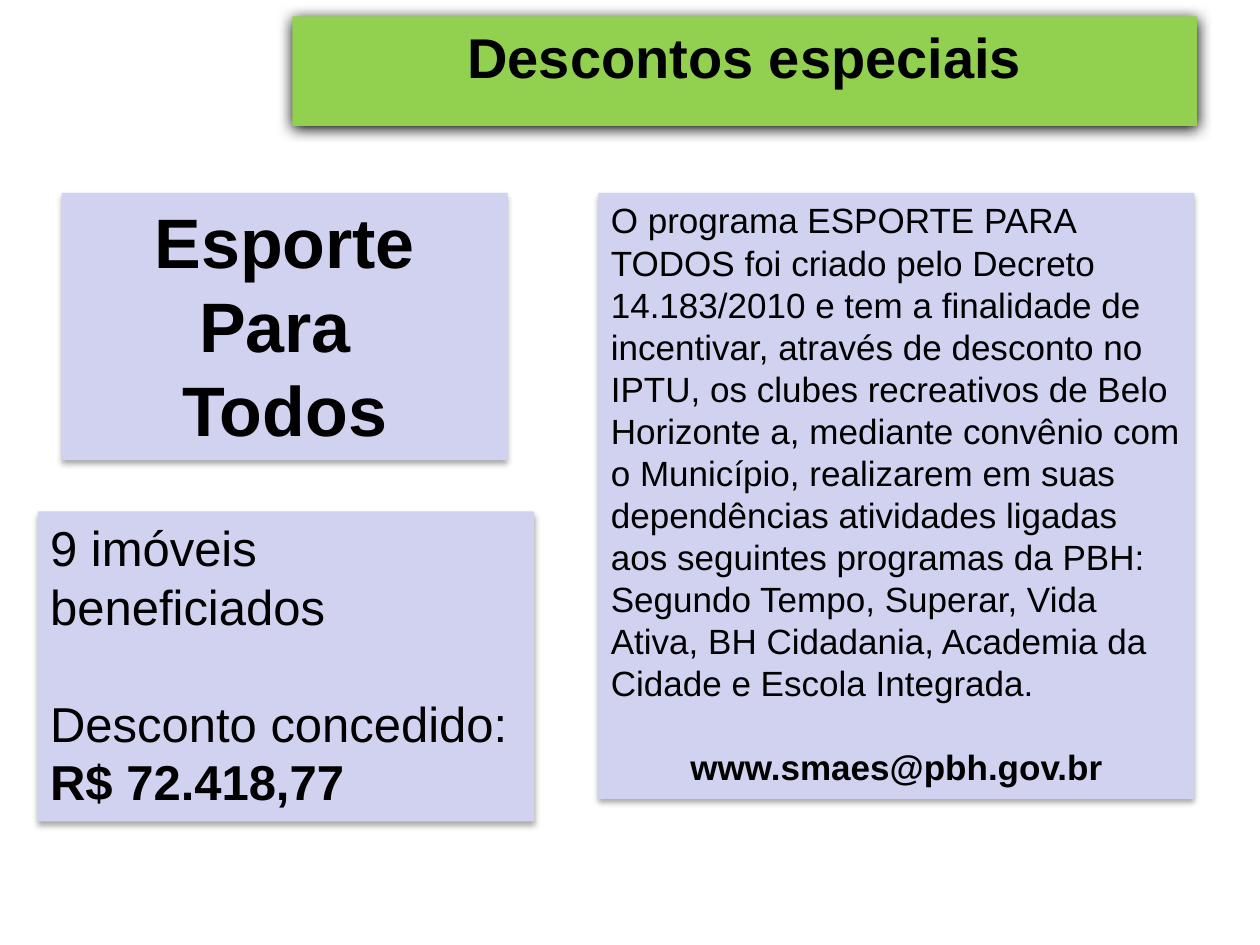
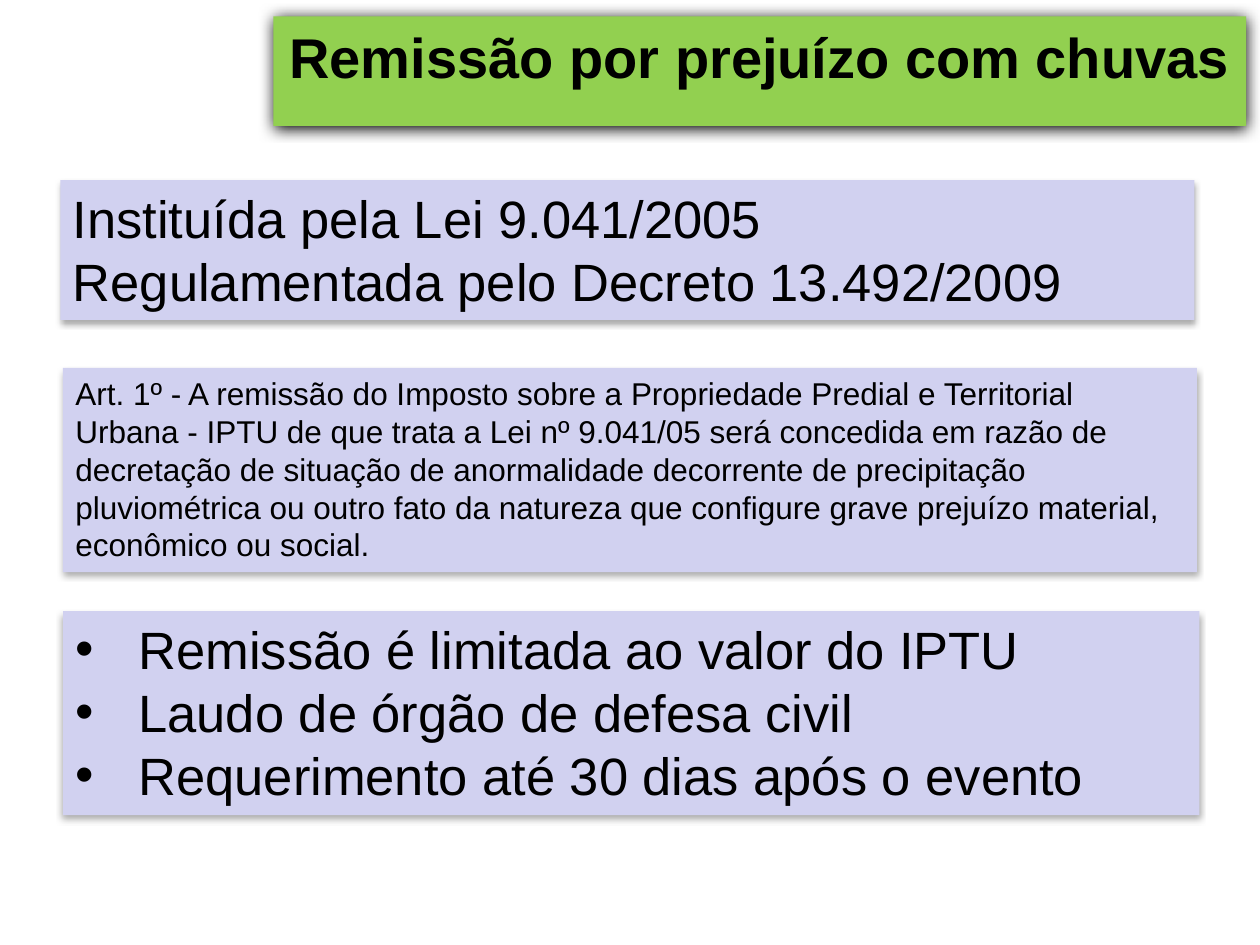
from lxml.etree import SubElement as Sub
from pptx import Presentation
from pptx.dml.color import RGBColor as Rgb
from pptx.enum.shapes import MSO_SHAPE as Kind
from pptx.enum.text import MSO_ANCHOR as Anchor, MSO_AUTO_SIZE as Auto, PP_ALIGN as Align
from pptx.oxml.ns import qn
from pptx.util import Inches, Pt

HUES = {"band": "92D050", "panel": "D1D1F0", "ink": "000000", "shade": "000000"}
GLOWS = {
    "band": {"alpha": 100, "blur": 8.5, "dist": 1},
    "panel": {"alpha": 32, "blur": 3.5, "dist": 2.2},
}
BOLD = {"bold": True}
MID = {"alignment": Align.CENTER}
INDENT = 0.5


def apply(item, props):
    for key, val in props.items():
        setattr(item, key, val)


def shade(shape, alpha, blur, dist):
    shape.shadow.inherit = False
    list_ = shape._element.spPr.find(qn("a:effectLst"))
    outer = Sub(list_, qn("a:outerShdw"), blurRad=str(Pt(blur)), dist=str(Pt(dist)),
                dir="5400000", algn="ctr", rotWithShape="0")
    tint = Sub(outer, qn("a:srgbClr"), val=HUES["shade"])
    Sub(tint, qn("a:alpha"), val=str(alpha * 1000))


def bullet(para):
    props = para._p.get_or_add_pPr()
    props.set("marL", str(Inches(INDENT)))
    props.set("indent", str(-Inches(INDENT)))
    Sub(props, qn("a:buFont"), typeface="Arial")
    Sub(props, qn("a:buChar"), char="•")


def block(slide, box, role, size, lines, marks=False):
    shape = slide.shapes.add_shape(Kind.RECTANGLE, *map(Inches, box))
    shape.fill.solid()
    shape.fill.fore_color.rgb = Rgb.from_string(HUES[role])
    shape.line.fill.background()
    shade(shape, **GLOWS[role])
    frame = shape.text_frame
    fit = Auto.SHAPE_TO_FIT_TEXT if role == "panel" else Auto.NONE
    apply(frame, {"word_wrap": True, "vertical_anchor": Anchor.TOP, "auto_size": fit})
    for num, (text, font, form) in enumerate(lines):
        para = frame.add_paragraph() if num else frame.paragraphs[0]
        apply(para, {"alignment": Align.LEFT, **form})
        if marks:
            bullet(para)
        run = para.add_run()
        run.text = text
        apply(run.font, {"name": "Arial", "size": Pt(size), "bold": False, **font})
        run.font.color.rgb = Rgb.from_string(HUES["ink"])


def plain(*texts):
    return [(text, {}, {}) for text in texts]


def title(slide, left, width, text):
    block(slide, (left, 0.13, width, 0.87), "band", 32, [(text, BOLD, MID)])


def sport(slide, box):
    x, y, w, h = box
    block(slide, (x, y + 2.53, 3.94, 2.46), "panel", 28, [
        ("9 imóveis beneficiados", {}, {}),
        ("Desconto concedido:", {}, {"space_before": Pt(33)}),
        ("R$ 72.418,77", BOLD, {}),
    ])
    block(slide, (x + w - 4.73, y, 4.73, 4.81), "panel", 20, [
        ("O programa ESPORTE PARA TODOS foi criado pelo Decreto 14.183/2010 e tem "
         "a finalidade de incentivar, através de desconto no IPTU, os clubes "
         "recreativos de Belo Horizonte a, mediante convênio com o Município, "
         "realizarem em suas dependências atividades ligadas aos seguintes "
         "programas da PBH:", {}, {}),
        ("Segundo Tempo, Superar, Vida Ativa, BH Cidadania, Academia da Cidade "
         "e Escola Integrada.", {}, {}),
        ("www.smaes@pbh.gov.br", BOLD, {**MID, "space_before": Pt(24)}),
    ])
    name = [(word, BOLD, MID) for word in ("Esporte", "Para ", "Todos")]
    block(slide, (x + 0.19, y, 3.54, 2.12), "panel", 40, name)


def rain(slide, box):
    x, y, w, h = box
    block(slide, (x, y, w, 1.11), "panel", 30, plain(
        "Instituída pela Lei 9.041/2005",
        "Regulamentada pelo Decreto 13.492/2009"))
    block(slide, (x + 0.02, y + h - 1.62, w + 0.02, 1.62), "panel", 30, plain(
        "Remissão é limitada ao valor do IPTU",
        "Laudo de órgão de defesa civil",
        "Requerimento até 30 dias após o evento"), marks=True)
    block(slide, (x + 0.02, y + 1.49, w, 1.62), "panel", 18, plain(
        "Art. 1º - A remissão do Imposto sobre a Propriedade Predial e Territorial "
        "Urbana - IPTU de que trata a Lei nº 9.041/05 será concedida em razão de "
        "decretação de situação de anormalidade decorrente de precipitação "
        "pluviométrica ou outro fato da natureza que configure grave prejuízo "
        "material, econômico ou social."))


def main():
    deck = Presentation()
    apply(deck, {"slide_width": Inches(10), "slide_height": Inches(7.5)})
    pages = [
        (2.32, 7.18, "Descontos especiais", sport, (0.3, 1.53, 9.18, 4.99)),
        (2.17, 7.72, "Remissão por prejuízo com chuvas", rain, (0.48, 1.43, 9, 5.04)),
    ]
    for left, width, text, body, box in pages:
        slide = deck.slides.add_slide(deck.slide_layouts[6])
        title(slide, left, width, text)
        body(slide, box)
    deck.save("out.pptx")


if __name__ == "__main__":
    main()
